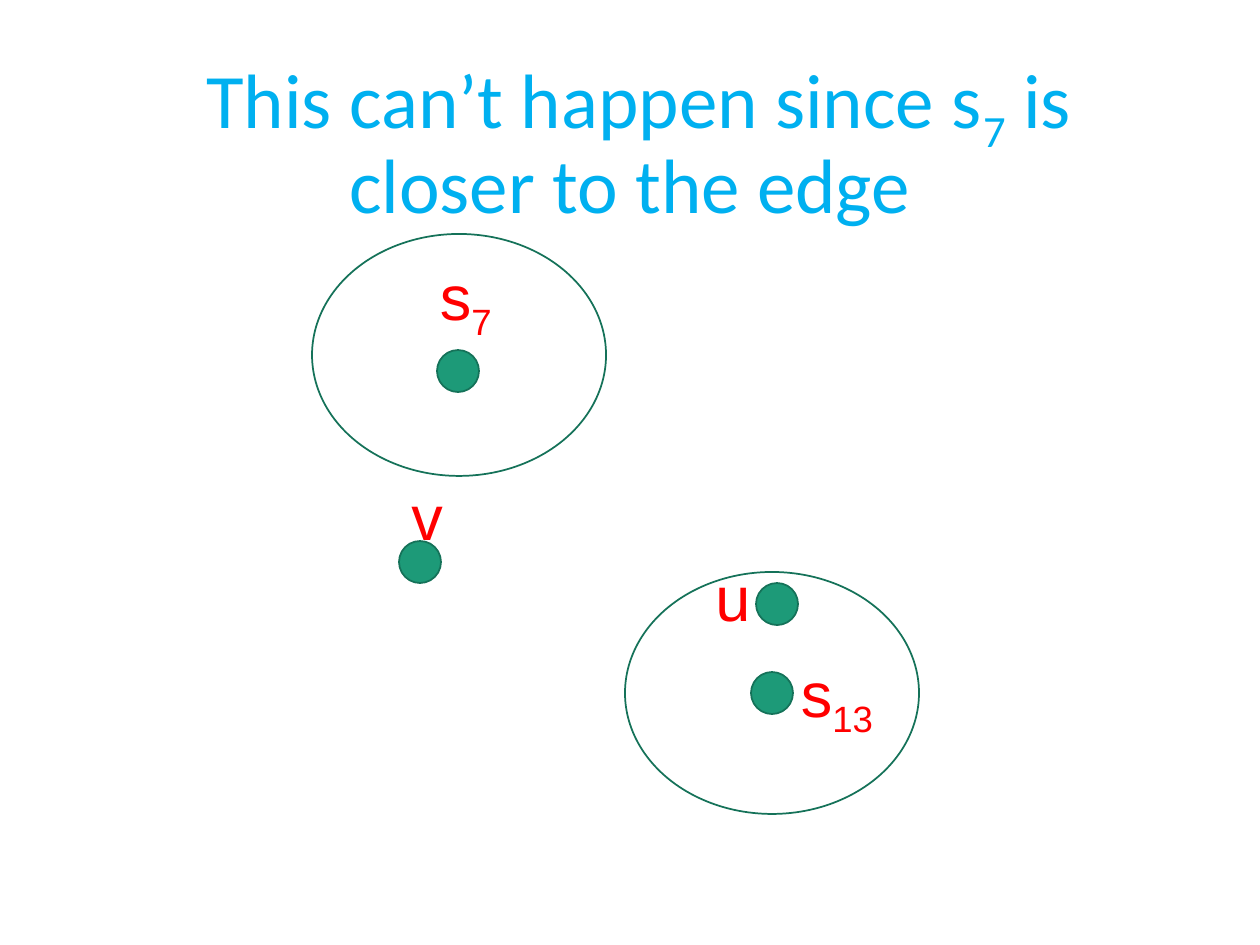
from dataclasses import dataclass

from pptx import Presentation
from pptx import util as u
from pptx.dml.color import RGBColor
from pptx.enum import shapes, text


@dataclass(frozen=True)
class Theme:
    head: str = "00B0F0"
    mark: str = "FF0000"
    fill: str = "1D9A78"
    edge: str = "157259"
    big: int = 44
    mid: int = 36
    sans: str = "Calibri"
    plain: str = "Arial"


class Board:
    scale = u.Inches(1) / 126

    def __init__(self, slide, theme):
        self.slide = slide
        self.theme = theme

    def span(self, *sizes):
        return [u.Emu(round(size * self.scale)) for size in sizes]

    def oval(self, left, top, width, height, fill=None):
        form = self.slide.shapes.add_shape(
            shapes.MSO_SHAPE.OVAL, *self.span(left, top, width, height))
        form.shadow.inherit = False
        if fill:
            form.fill.solid()
            form.fill.fore_color.rgb = RGBColor.from_string(fill)
        else:
            form.fill.background()
        form.line.color.rgb = RGBColor.from_string(self.theme.edge)
        form.line.width = u.Pt(1)

    def dot(self, left, top):
        self.oval(left, top, 42, 42, self.theme.fill)

    def ring(self, left, top):
        self.oval(left, top, 294, 242)

    def words(self, box, runs, font, size, color):
        area = self.slide.shapes.add_textbox(*self.span(*box))
        frame = area.text_frame
        frame.word_wrap = True
        line = frame.paragraphs[0]
        for words, low in runs:
            run = line.add_run()
            run.text = words
            run.font.name = font
            run.font.size = u.Pt(size)
            run.font.color.rgb = RGBColor.from_string(color)
            if low:
                run.font._element.set("baseline", "-25000")
        return frame

    def title(self, *runs):
        theme = self.theme
        frame = self.words((87, 50, 1086, 183), runs,
                           theme.sans, theme.big, theme.head)
        frame.vertical_anchor = text.MSO_ANCHOR.MIDDLE
        line = frame.paragraphs[0]
        line.alignment = text.PP_ALIGN.CENTER
        line.line_spacing = 0.9

    def label(self, left, top, *runs):
        theme = self.theme
        frame = self.words((left, top, 179, 89), runs,
                           theme.plain, theme.mid, theme.mark)
        frame.auto_size = text.MSO_AUTO_SIZE.SHAPE_TO_FIT_TEXT


def main():
    deck = Presentation()
    deck.slide_width = u.Inches(10)
    deck.slide_height = u.Inches(7.5)
    board = Board(deck.slides.add_slide(deck.slide_layouts[6]), Theme())

    board.title((" This can’t happen since s", False), ("7", True),
                (" is closer to the edge", False))
    board.dot(437, 350)
    board.ring(312, 234)
    board.dot(756, 583)
    board.label(703, 552, ("u", False))
    board.label(399, 471, ("v", False))
    board.label(410, 251, (" s", False), ("7", True))
    board.dot(399, 541)
    board.dot(751, 672)
    board.ring(625, 572)
    board.label(771, 648, (" s", False), ("13", True))
    deck.save("out.pptx")


if __name__ == "__main__":
    main()
